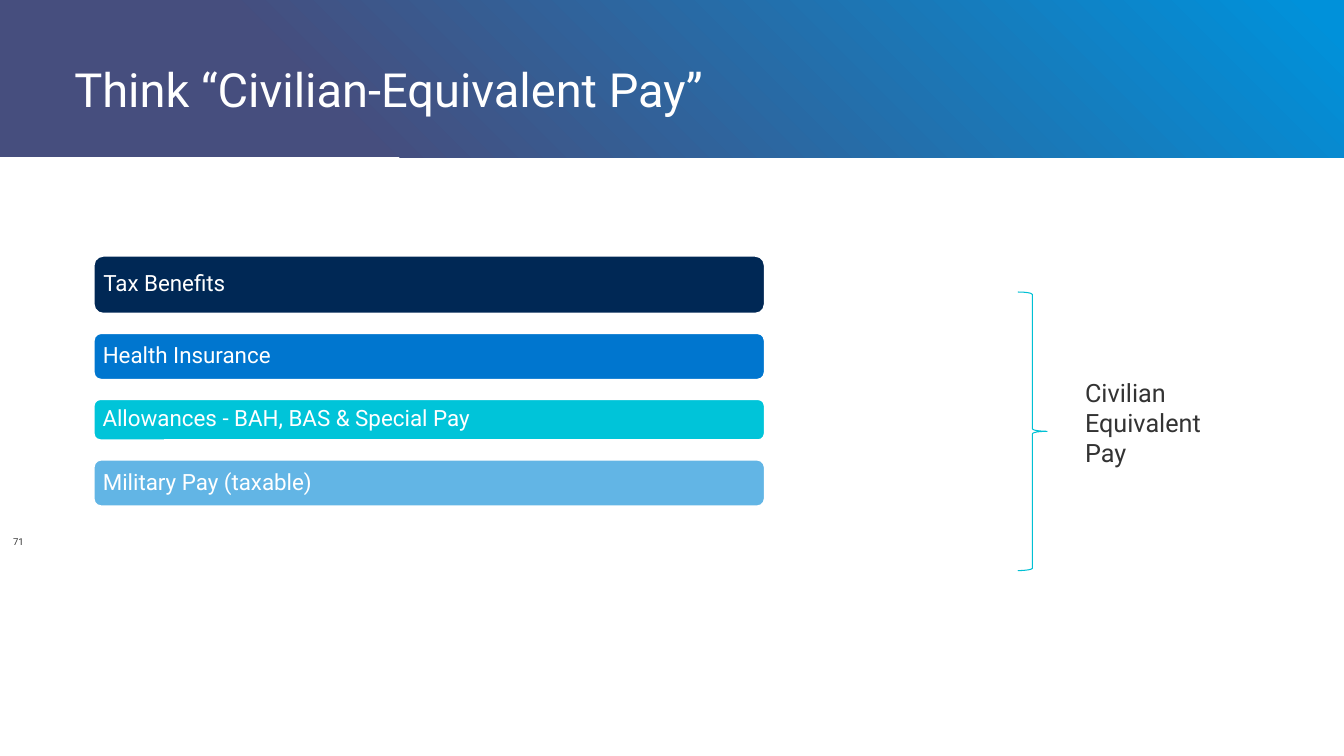
from pptx import Presentation
from pptx.dml.color import RGBColor
from pptx.enum.shapes import MSO_SHAPE
from pptx.enum.text import MSO_ANCHOR, PP_ALIGN
from pptx.util import Pt

RECTANGLE = MSO_SHAPE.RECTANGLE
ROUNDED = MSO_SHAPE.ROUNDED_RECTANGLE
RIGHT_BRACE = MSO_SHAPE.RIGHT_BRACE
TOP, MIDDLE, BOTTOM = MSO_ANCHOR.TOP, MSO_ANCHOR.MIDDLE, MSO_ANCHOR.BOTTOM
LEFT = PP_ALIGN.LEFT

WHITE = RGBColor(0xFF, 0xFF, 0xFF)
INK = RGBColor(0x33, 0x33, 0x33)
INDIGO = RGBColor(0x46, 0x4E, 0x7E)
AZURE = RGBColor(0x00, 0x91, 0xDA)
NAVY = RGBColor(0x00, 0x28, 0x55)
BLUE = RGBColor(0x00, 0x76, 0xCF)
CYAN = RGBColor(0x00, 0xC4, 0xD9)
SKY = RGBColor(0x62, 0xB5, 0xE5)
BRACE_CYAN = RGBColor(0x00, 0xC0, 0xD4)

FONT = "Roboto"
SLIDE_WIDTH, SLIDE_HEIGHT = 960, 540
PAY_PARTS = [  # label, bar height, colour
    ("Tax Benefits", 42, NAVY),
    ("Health Insurance", 34, BLUE),
    ("Allowances - BAH, BAS & Special Pay", 30, CYAN),
    ("Military Pay (taxable)", 34, SKY),
]
BAR_GAP = 13.2


def add_plain_shape(slide, preset, left, top, width, height):
    shape = slide.shapes.add_shape(preset, Pt(left), Pt(top), Pt(width), Pt(height))
    shape.shadow.inherit = False
    return shape


def write(shape, wording, size, color, anchor, insets=(7.2, 3.6), spacing=1.0):
    """Fill the shape with one left-aligned paragraph; insets are (side, top and bottom)."""
    frame = shape.text_frame
    frame.word_wrap = True
    frame.vertical_anchor = anchor
    frame.margin_left = frame.margin_right = Pt(insets[0])
    frame.margin_top = frame.margin_bottom = Pt(insets[1])
    paragraph = frame.paragraphs[0]
    paragraph.alignment = LEFT
    paragraph.line_spacing = spacing
    run = paragraph.add_run()
    run.text = wording
    run.font.name = FONT
    run.font.size = Pt(size)
    run.font.color.rgb = color


def add_label(slide, left, top, width, height, wording, size, color, anchor, **layout):
    label = slide.shapes.add_textbox(Pt(left), Pt(top), Pt(width), Pt(height))
    write(label, wording, size, color, anchor, **layout)


def add_header(slide, left, top, width, height):
    band = add_plain_shape(slide, RECTANGLE, left, top, width, height)
    band.line.fill.background()
    band.fill.gradient()
    band.fill.gradient_angle = 45
    stops = [(0.25, INDIGO), (0.98, AZURE)]
    for stop, (position, color) in zip(band.fill.gradient_stops, stops):
        stop.position = position
        stop.color.rgb = color
    add_label(slide, left + 46, top + 49, width - 96, 36,
              "Think “Civilian-Equivalent Pay”", 33.6, WHITE, MIDDLE, spacing=0.8)


def add_pay_bars(slide, left, top, width):
    for wording, height, color in PAY_PARTS:
        bar = add_plain_shape(slide, ROUNDED, left, top, width, height)
        bar.fill.solid()
        bar.fill.fore_color.rgb = color
        bar.line.color.rgb = WHITE
        bar.line.width = Pt(2)
        write(bar, wording, 16, WHITE, MIDDLE, insets=(5.2, 3), spacing=0.9)
        top += height + BAR_GAP


def add_total(slide, left, top, height):
    """Brace with the name of the sum to its right."""
    brace = add_plain_shape(slide, RIGHT_BRACE, left, top, 21, height)
    brace.fill.background()
    brace.line.color.rgb = BRACE_CYAN
    brace.line.width = Pt(0.75)
    add_label(slide, left + 41, top + 57, 109.4, 73,
              "Civilian Equivalent Pay", 18, INK, TOP)


def main():
    deck = Presentation()
    deck.slide_width, deck.slide_height = Pt(SLIDE_WIDTH), Pt(SLIDE_HEIGHT)
    slide = deck.slides.add_slide(deck.slide_layouts[6])
    add_header(slide, 0, 0, SLIDE_WIDTH, 112.4)
    add_label(slide, 9.4, 368.6, 24.5, 22.3, "71", 6.8, INK, BOTTOM, insets=(0, 0))
    add_pay_bars(slide, 66.6, 182.4, 480)
    add_total(slide, 727, 208.6, 199)
    deck.save("out.pptx")


if __name__ == "__main__":
    main()
